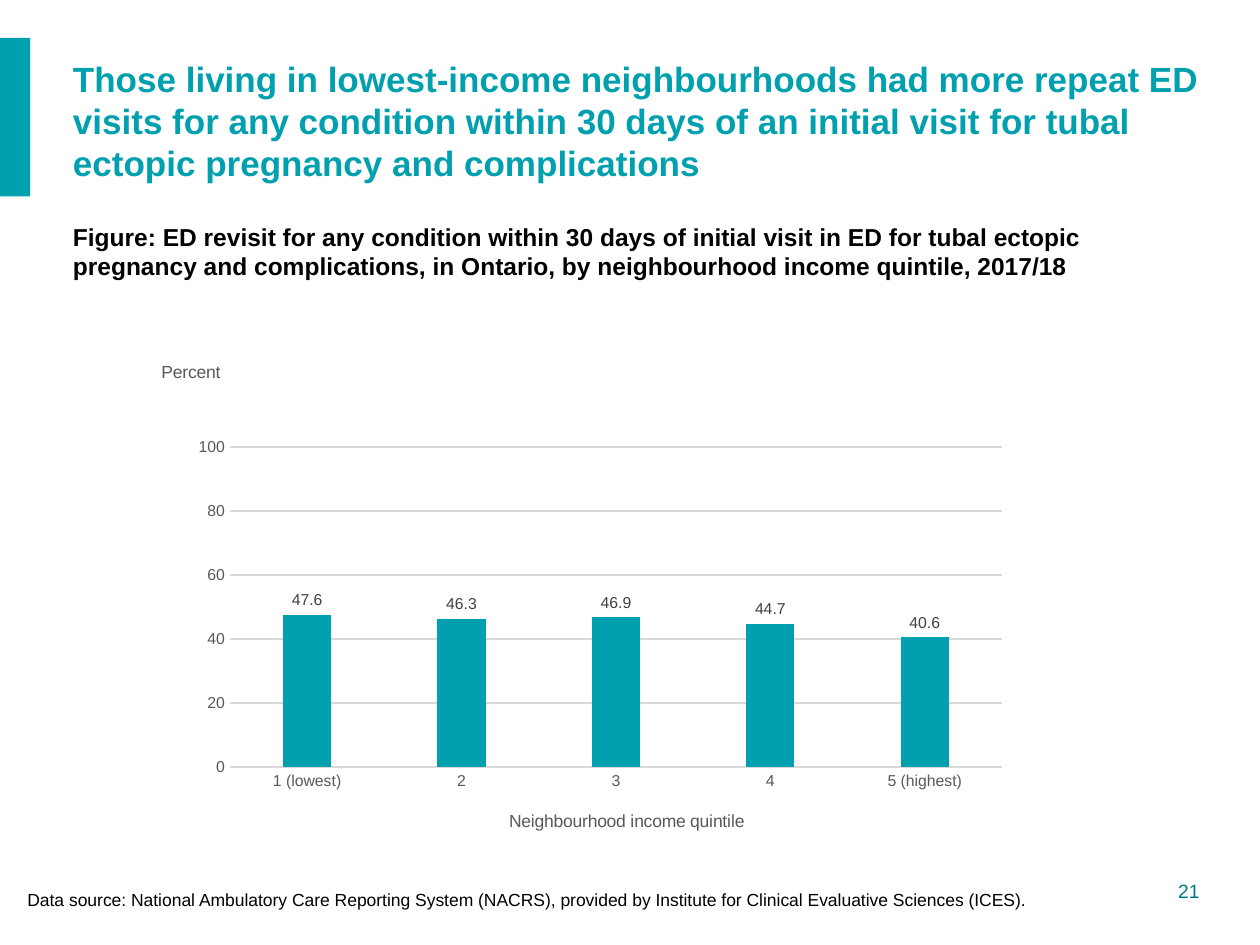
"""Build a slide on repeat emergency visits by income quintile."""
from dataclasses import dataclass

from lxml.etree import SubElement
from pptx import Presentation
from pptx.chart.data import CategoryChartData
from pptx.dml.color import RGBColor
from pptx.enum.chart import XL_CHART_TYPE, XL_LABEL_POSITION, XL_TICK_MARK
from pptx.enum.shapes import MSO_SHAPE
from pptx.enum.text import MSO_ANCHOR, PP_ALIGN
from pptx.oxml.ns import qn
from pptx.util import Pt

TEAL, GREY, RULE = "00A0AF", "595959", "D9D9D9"


@dataclass
class Label:
    """A text box with one style."""
    text: str
    box: tuple[float, float, float, float]
    size: float
    color: str = "000000"
    bold: bool = False
    align: PP_ALIGN = PP_ALIGN.LEFT
    anchor: MSO_ANCHOR = MSO_ANCHOR.TOP


@dataclass
class Axis:
    """An axis title and its place as fractions of the chart."""
    title: str
    left: float
    top: float


LABELS = [
    Label("21", (608.4, 499, 84.2, 20.9), 11, "00788A", align=PP_ALIGN.RIGHT),
    Label("Those living in lowest-income neighbourhoods had more repeat ED "
          "visits for any condition within 30 days of an initial visit for "
          "tubal ectopic pregnancy and complications",
          (34.6, 29, 658.8, 80), 20, TEAL, True, anchor=MSO_ANCHOR.MIDDLE),
    Label("Data source: National Ambulatory Care Reporting System (NACRS), "
          "provided by Institute for Clinical Evaluative Sciences (ICES).",
          (8.6, 504.7, 693.4, 19.4), 10),
    Label("Figure: ED revisit for any condition within 30 days of initial "
          "visit in ED for tubal ectopic pregnancy and complications, in "
          "Ontario, by neighbourhood income quintile, 2017/18",
          (34.6, 123.1, 604.8, 41), 14, bold=True),
]
RATES = {"1 (lowest)": 47.6, "2": 46.3, "3": 46.9, "4": 44.7,
         "5 (highest)": 40.6}


def paint(part, color: str) -> None:
    """Colour a font, a fill or a line."""
    if hasattr(part, "solid"):
        part.solid()
        part.fore_color.rgb = RGBColor.from_string(color)
    else:
        part.color.rgb = RGBColor.from_string(color)


def style(font, size: float, color: str, bold: bool = False) -> None:
    """Set the face, size, weight and colour of a font."""
    font.name, font.size, font.bold = "Arial", Pt(size), bold
    paint(font, color)


def write(slide, label: Label) -> None:
    """Add one text box."""
    frame = slide.shapes.add_textbox(*map(Pt, label.box)).text_frame
    frame.word_wrap = True
    frame.vertical_anchor = label.anchor
    frame.text = label.text
    line = frame.paragraphs[0]
    line.alignment = label.align
    style(line.runs[0].font, label.size, label.color, label.bold)


def place(node, index: int, **parts) -> None:
    """Give a chart part a manual layout."""
    for old in node.findall(qn("c:layout")):
        node.remove(old)
    layout = SubElement(node, qn("c:layout"))
    node.insert(index, layout)
    manual = SubElement(layout, qn("c:manualLayout"))
    for name, value in parts.items():
        SubElement(manual, qn(f"c:{name}")).set("val", str(value))


def dress(axis, spec: Axis) -> None:
    """Style an axis and set its title."""
    axis.major_tick_mark = axis.minor_tick_mark = XL_TICK_MARK.NONE
    style(axis.tick_labels.font, 9, GREY)
    title = axis.axis_title
    title.text_frame.text = spec.title
    style(title.text_frame.paragraphs[0].runs[0].font, 10, GREY)
    node = title._element
    body = node.find(".//" + qn("a:bodyPr"))
    body.set("rot", "0")
    body.set("vert", "horz")
    place(node, 1, xMode="edge", yMode="edge", x=spec.left, y=spec.top)


def plot(slide) -> None:
    """Add the column chart of rates."""
    data = CategoryChartData()
    data.categories = list(RATES)
    data.add_series("Series 1", list(RATES.values()))
    box = map(Pt, (34.6, 191.5, 620.6, 313.2))
    chart = slide.shapes.add_chart(
        XL_CHART_TYPE.COLUMN_CLUSTERED, *box, data).chart
    chart.has_legend = chart.has_title = False
    style(chart.font, 10, "000000")
    cats, vals = chart.category_axis, chart.value_axis
    dress(cats, Axis("Neighbourhood income quintile", 0.41, 0.86))
    dress(vals, Axis("Percent", 0.09, 0.04))
    vals.minimum_scale, vals.maximum_scale, vals.major_unit = 0, 100, 20
    vals.tick_labels.number_format = "#,##0"
    vals.tick_labels.number_format_is_linked = False
    vals.format.line.fill.background()
    for line in (cats.format.line, vals.major_gridlines.format.line):
        paint(line, RULE)
        line.width = Pt(0.75)
    bars = chart.plots[0]
    bars.gap_width, bars.overlap, bars.vary_by_categories = 219, -27, False
    paint(bars.series[0].format.fill, TEAL)
    tags = bars.series[0].data_labels
    tags.show_value = True
    tags.position = XL_LABEL_POSITION.OUTSIDE_END
    tags.number_format, tags.number_format_is_linked = ".0", False
    style(tags.font, 9, "404040")
    area = chart._chartSpace.find(".//" + qn("c:plotArea"))
    place(area, 0, layoutTarget="inner", xMode="edge", yMode="edge",
          x=0.156, y=0.204, w=0.711, h=0.584)


def main() -> None:
    """Build and save the slide."""
    deck = Presentation()
    deck.slide_width, deck.slide_height = Pt(720), Pt(540)
    slide = deck.slides.add_slide(deck.slide_layouts[6])
    band = slide.shapes.add_shape(
        MSO_SHAPE.RECTANGLE, Pt(0), Pt(21.6), Pt(17.3), Pt(90.7))
    band.shadow.inherit = False
    paint(band.fill, TEAL)
    band.line.fill.background()
    plot(slide)
    for label in LABELS:
        write(slide, label)
    deck.save("out.pptx")


if __name__ == "__main__":
    main()
